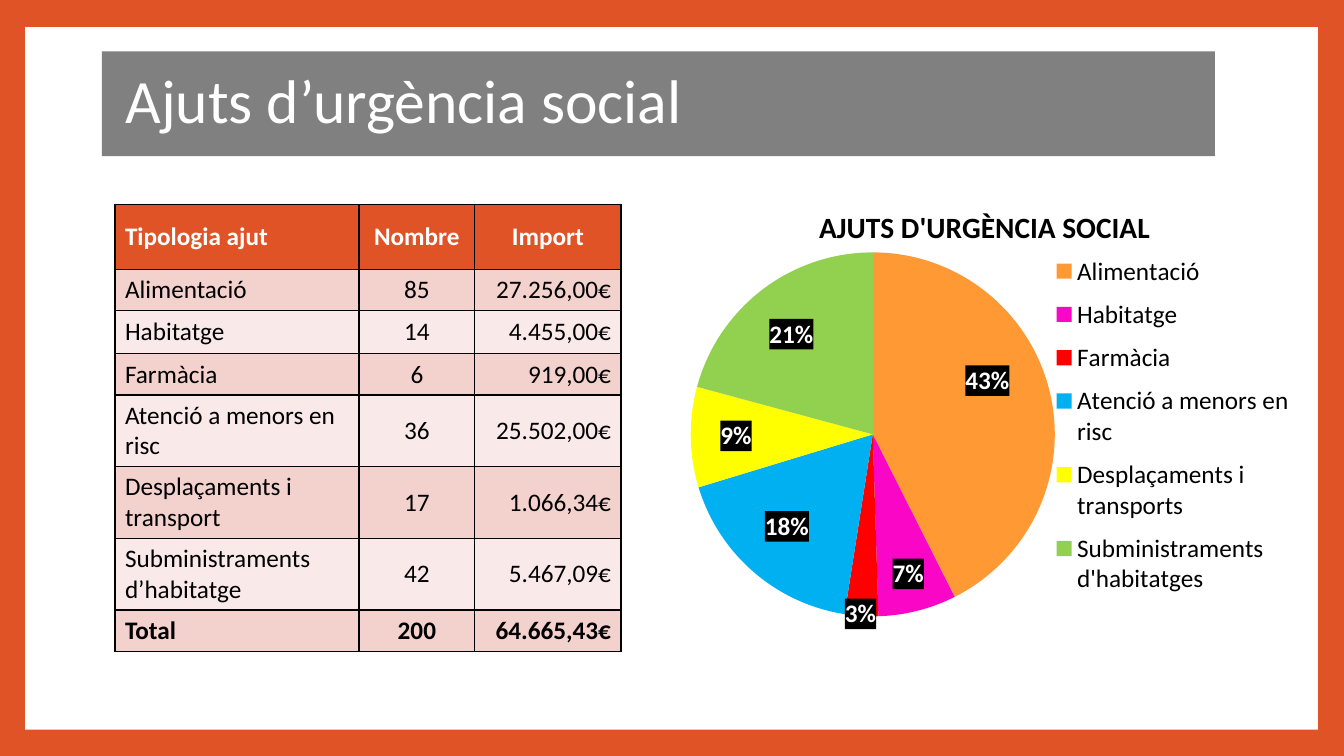
import pptx
import pptx.chart.data
import pptx.dml.color
import pptx.enum.chart
import pptx.enum.shapes
import pptx.enum.text
import pptx.oxml
import pptx.oxml.ns
import pptx.util
from pptx.util import Inches

COLORS = {"orange": "DF5327", "white": "FFFFFF", "grey": "808080", "black": "000000",
          "band_dark": "F3D1CD", "band_light": "F9E9E8",
          "food": "FF9933", "housing": "FA06C6", "pharmacy": "FF0000",
          "minors": "00B0F0", "transport": "FFFF00", "utilities": "92D050"}
FONT = "Calibri"
BODY_SIZE = 18
NS = pptx.oxml.ns.nsdecls("c", "a")
ALIGN = pptx.enum.text.PP_ALIGN
MIDDLE = pptx.enum.text.MSO_ANCHOR.MIDDLE


def style_font(font, size, color, bold=False):
    font.name, font.size, font.bold = FONT, pptx.util.Pt(size), bold
    font.color.rgb = pptx.dml.color.RGBColor.from_string(COLORS[color])


def paint(fill, color):
    fill.solid()
    fill.fore_color.rgb = pptx.dml.color.RGBColor.from_string(COLORS[color])


deck = pptx.Presentation()
deck.slide_width, deck.slide_height = Inches(13.33), Inches(7.5)
page = deck.slides.add_slide(deck.slide_layouts[6])

# Orange background, white sheet and grey title band
paint(page.background.fill, "orange")
for color, area in (("white", (0.25, 0.27, 12.82, 6.97)),
                    ("grey", (1.01, 0.51, 11.04, 1.04))):
    box = page.shapes.add_shape(pptx.enum.shapes.MSO_SHAPE.RECTANGLE, *map(Inches, area))
    box.shadow.inherit = False
    paint(box.fill, color)
    box.line.fill.background()

# Title text, in the band drawn last
box.text_frame.word_wrap = True
box.text_frame.vertical_anchor = MIDDLE
para = box.text_frame.paragraphs[0]
para.alignment = ALIGN.LEFT
para.line_spacing = 0.9
span = para.add_run()
span.text = " Ajuts d’urgència social"
style_font(span.font, 44, "white")

# Table of aid types: row height and cell texts
rows = [
    (0.64, "Tipologia ajut", "Nombre", "Import"),
    (0.41, "Alimentació", "85", "27.256,00€"),
    (0.43, "Habitatge", "14", "4.455,00€"),
    (0.41, "Farmàcia", "6", "919,00€"),
    (0.71, "Atenció a menors en risc", "36", "25.502,00€"),
    (0.71, "Desplaçaments i transport", "17", "1.066,34€"),
    (0.71, "Subministraments d’habitatge", "42", "5.467,09€"),
    (0.41, "Total", "200", "64.665,43€"),
]
header_row, total_row = 0, len(rows) - 1
table = page.shapes.add_table(len(rows), 3, Inches(1.14), Inches(2.03),
                              Inches(5.02), Inches(4.4)).table
for column, width in zip(table.columns, (2.42, 1.15, 1.45)):
    column.width = Inches(width)
for row_number, (height, *texts) in enumerate(rows):
    table.rows[row_number].height = Inches(height)
    is_header = row_number == header_row
    if is_header:
        fill, text_color = "orange", "white"
        alignments = (ALIGN.LEFT, ALIGN.CENTER, ALIGN.CENTER)
    else:
        fill, text_color = ("band_dark" if row_number % 2 else "band_light"), "black"
        alignments = (ALIGN.LEFT, ALIGN.CENTER, ALIGN.RIGHT)
    for cell, text, alignment in zip(table.rows[row_number].cells, texts, alignments):
        cell.vertical_anchor = MIDDLE
        para = cell.text_frame.paragraphs[0]
        para.alignment = alignment
        span = para.add_run()
        span.text = text
        style_font(span.font, BODY_SIZE, text_color, is_header or row_number == total_row)
        for side in ("lnL", "lnR", "lnT", "lnB"):
            cell._tc.get_or_add_tcPr().append(pptx.oxml.parse_xml(
                f'<a:{side} {NS} w="12700"><a:solidFill>'
                f'<a:srgbClr val="{COLORS["black"]}"/></a:solidFill></a:{side}>'))
        paint(cell.fill, fill)

# Pie chart: category, share, colour, label shift from the middle of its slice
slices = [
    ("Alimentació", 43, "food", 0.04, -0.07),
    ("Habitatge", 7, "housing", 0.02, 0.11),
    ("Farmàcia", 3, "pharmacy", -0.01, 0.19),
    ("Atenció a menors en risc", 18, "minors", -0.04, 0.05),
    ("Desplaçaments i transports", 9, "transport", -0.07, 0),
    ("Subministraments d'habitatges", 21, "utilities", -0.04, -0.06),
]
heading = "AJUTS D'URGÈNCIA SOCIAL"
data = pptx.chart.data.CategoryChartData()
data.categories = [category for category, *_ in slices]
data.add_series(heading, [share for _, share, *_ in slices])
chart = page.shapes.add_chart(pptx.enum.chart.XL_CHART_TYPE.PIE, Inches(6.45), Inches(1.81),
                              Inches(6.49), Inches(4.63), data).chart
style_font(chart.font, BODY_SIZE, "black")
chart.has_title = True
span = chart.chart_title.text_frame.paragraphs[0].add_run()
span.text = heading
style_font(span.font, 21, "black", True)
chart.has_legend = True
chart.legend.position = pptx.enum.chart.XL_LEGEND_POSITION.RIGHT
chart.legend.include_in_layout = False

# Place title, plot and legend by fractions of the chart's size
target = '<c:layoutTarget val="inner"/>'
edges = '<c:xMode val="edge"/><c:yMode val="edge"/>'
places = [
    ("title", edges, {"x": 0.25, "y": 0.04}),
    ("plotArea", target + edges, {"x": 0.05, "y": 0.15, "w": 0.58, "h": 0.78}),
    ("legend", edges, {"x": 0.64, "y": 0.13, "w": 0.36, "h": 0.78}),
]
for name, modes, fractions in places:
    part = chart.element.xpath(f"c:chart/c:{name}")[0]
    for old_layout in part.xpath("c:layout"):
        part.remove(old_layout)
    numbers = "".join(f'<c:{key} val="{value}"/>' for key, value in fractions.items())
    # The layout follows the title's text or the legend's position; in the plot it is first
    position = len(part.xpath("c:tx | c:legendPos"))
    part.insert(position, pptx.oxml.parse_xml(
        f'<c:layout {NS}><c:manualLayout>{modes}{numbers}</c:manualLayout></c:layout>'))

# Slice colours, and white percentages on black
plot = chart.plots[0]
plot.vary_by_categories = True
for number, (_, _, color, shift_x, shift_y) in enumerate(slices):
    point = plot.series[0].points[number]
    paint(point.format.fill, color)
    label = point.data_label
    label.position = pptx.enum.chart.XL_LABEL_POSITION.CENTER
    style_font(label.font, BODY_SIZE, "white", True)
    node = chart.element.xpath(f".//c:dLbl[c:idx/@val='{number}']")[0]
    node.insert(1, pptx.oxml.parse_xml(
        f'<c:layout {NS}><c:manualLayout><c:x val="{shift_x}"/><c:y val="{shift_y}"/>'
        f'</c:manualLayout></c:layout>'))
    for old_format in node.xpath("c:spPr"):
        node.remove(old_format)
    node.xpath("c:txPr")[0].addprevious(pptx.oxml.parse_xml(
        f'<c:spPr {NS}><a:solidFill><a:srgbClr val="{COLORS["black"]}"/></a:solidFill></c:spPr>'))
    node.xpath("c:showVal")[0].set("val", "0")
    node.xpath("c:showPercent")[0].set("val", "1")

deck.save("out.pptx")
